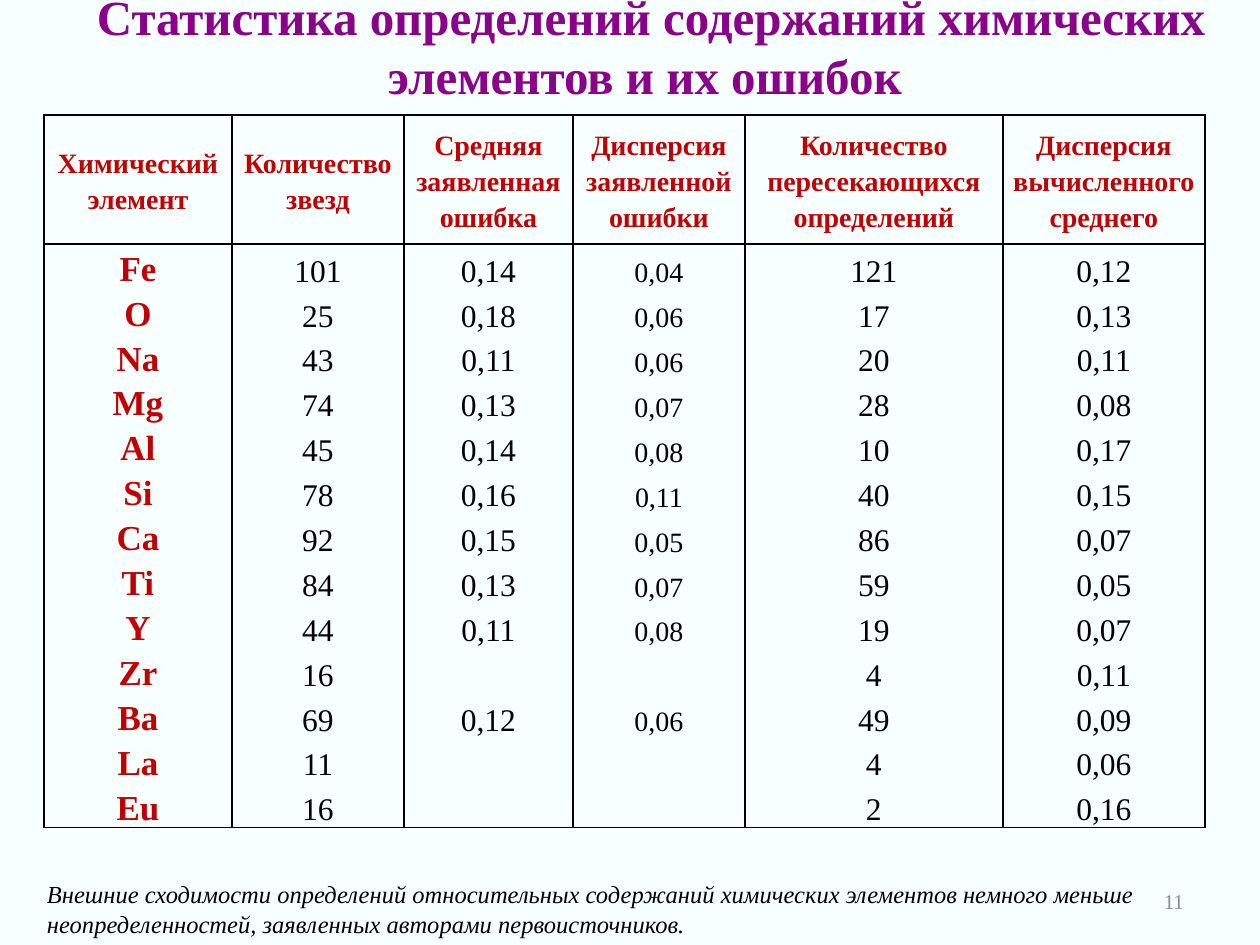
from lxml.etree import SubElement as Sub
from pptx import Presentation
from pptx.dml.color import RGBColor
from pptx.enum.text import MSO_ANCHOR as Anchor, PP_ALIGN as Align
from pptx.oxml.ns import qn
from pptx.util import Pt

SCALE = 914400 / 126  # EMU in one px
FONT = "Times New Roman"
PURPLE, RED, BLACK, GREY = "8A008A", "C00000", "000000", "8C8C8C"

HEADS = [
    "Химический элемент", "Количество звезд", "Средняя заявленная ошибка",
    "Дисперсия заявленной ошибки", "Количество пересекающихся определений",
    "Дисперсия вычисленного среднего",
]
ROWS = [
    ("Fe", "101", "0,14", "0,04", "121", "0,12"),
    ("O", "25", "0,18", "0,06", "17", "0,13"),
    ("Na", "43", "0,11", "0,06", "20", "0,11"),
    ("Mg", "74", "0,13", "0,07", "28", "0,08"),
    ("Al", "45", "0,14", "0,08", "10", "0,17"),
    ("Si", "78", "0,16", "0,11", "40", "0,15"),
    ("Ca", "92", "0,15", "0,05", "86", "0,07"),
    ("Ti", "84", "0,13", "0,07", "59", "0,05"),
    ("Y", "44", "0,11", "0,08", "19", "0,07"),
    ("Zr", "16", "", "", "4", "0,11"),
    ("Ba", "69", "0,12", "0,06", "49", "0,09"),
    ("La", "11", "", "", "4", "0,06"),
    ("Eu", "16", "", "", "2", "0,16"),
]
WIDTHS = [188, 172, 169, 172, 258, 202]
SIZES = [20, 18, 18, 16, 18, 18]
HEAD_H, BODY_H = 129, 584


def px(n):
    return int(n * SCALE)


def color(code):
    return RGBColor.from_string(code)


class Deck:
    def __init__(self, width, height, back):
        self.prs = Presentation()
        self.prs.slide_width, self.prs.slide_height = px(width), px(height)
        self.slide = self.prs.slides.add_slide(self.prs.slide_layouts[6])
        fill = self.slide.background.fill
        fill.solid()
        fill.fore_color.rgb = color(back)

    def style(self, para, size, code, align, bold=False, italic=False):
        para.alignment = align
        for run in para.runs:
            font = run.font
            font.name, font.size = FONT, Pt(size)
            font.bold, font.italic = bold, italic
            font.color.rgb = color(code)

    def text(self, box, words, size, code, align=Align.LEFT,
             anchor=Anchor.TOP, inset=13, **look):
        frame = self.slide.shapes.add_textbox(*map(px, box)).text_frame
        frame.word_wrap = True
        frame.vertical_anchor = anchor
        frame.margin_left = frame.margin_right = px(inset)
        frame.text = words
        self.style(frame.paragraphs[0], size, code, align, **look)

    def border(self, cell, sides):
        props = cell._tc.get_or_add_tcPr()
        for side in "LRTB":
            line = Sub(props, qn("a:ln" + side), w=str(Pt(1)))
            if side in sides:
                solid = Sub(line, qn("a:solidFill"))
                Sub(solid, qn("a:srgbClr"), val=BLACK)
            else:
                Sub(line, qn("a:noFill"))

    def cell(self, cell, words, size, code, bold, anchor, sides):
        cell.margin_left = cell.margin_right = px(9)
        cell.margin_top = cell.margin_bottom = 0
        cell.vertical_anchor = anchor
        cell.text_frame.text = words
        para = cell.text_frame.paragraphs[0]
        # Single lines stay tight so that the rows keep their height
        para.line_spacing = 1.15 if anchor == Anchor.MIDDLE else 1.0
        self.style(para, size, code, Align.CENTER, bold)
        self.border(cell, sides)
        cell.fill.background()

    def table(self, left, top):
        last = len(ROWS)
        box = map(px, (left, top, sum(WIDTHS), HEAD_H + BODY_H))
        grid = self.slide.shapes.add_table(last + 1, len(HEADS), *box).table
        grid.first_row = grid.horz_banding = False
        for col, width in zip(grid.columns, WIDTHS):
            col.width = px(width)
        for r, row in enumerate([HEADS] + ROWS):
            head = r == 0
            grid.rows[r].height = px(HEAD_H if head else BODY_H / last)
            # Horizontal rules: around the header and under the last row
            sides = "LR" + "T" * (r < 2) + "B" * (r in (0, last))
            anchor = Anchor.MIDDLE if head else Anchor.BOTTOM
            for c, words in enumerate(row):
                bold = head or c == 0
                self.cell(grid.cell(r, c), words, 16 if head else SIZES[c],
                          RED if bold else BLACK, bold, anchor, sides)


def main():
    deck = Deck(1260, 945, "F7FFFF")

    # Title
    deck.text((84, 16, 1134, 59),
              "Статистика определений содержаний химических элементов "
              "и их ошибок ", 28, PURPLE, Align.CENTER, Anchor.MIDDLE,
              inset=6, bold=True)

    # Table of elements
    deck.table(44, 115)

    # Closing remark and page number
    deck.text((34, 873, 1191, 72),
              "Внешние сходимости определений относительных содержаний "
              "химических элементов немного меньше неопределенностей, "
              "заявленных авторами первоисточников.", 14, BLACK, italic=True)
    deck.text((903, 876, 294, 50), "11", 12, GREY, Align.RIGHT, Anchor.MIDDLE)

    deck.prs.save("out.pptx")


if __name__ == "__main__":
    main()
